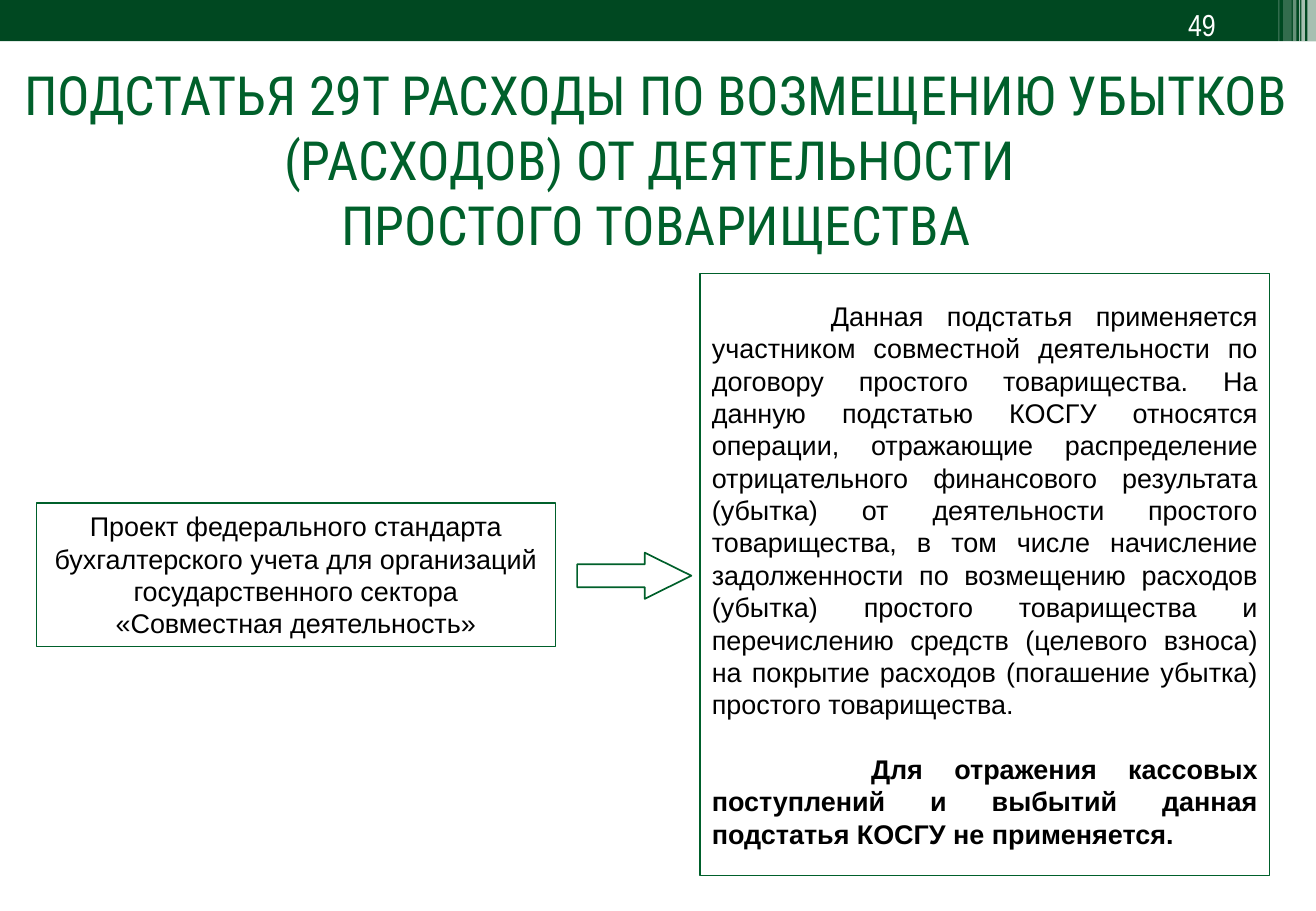
import pptx
import pptx.util
import pptx.dml.color
import pptx.enum.shapes
import pptx.enum.text
from lxml import etree

Inches = pptx.util.Inches
Pt = pptx.util.Pt
RGBColor = pptx.dml.color.RGBColor
Shapes = pptx.enum.shapes.MSO_SHAPE
Align = pptx.enum.text.PP_ALIGN
Anchor = pptx.enum.text.MSO_ANCHOR

BAND_GREEN = RGBColor(0x00, 0x48, 0x21)
GREEN = RGBColor(0x00, 0x60, 0x2B)
WHITE = RGBColor(0xFF, 0xFF, 0xFF)
BLACK = RGBColor(0x00, 0x00, 0x00)

PAGE_NUMBER = "49"
HEADING = [
    "ПОДСТАТЬЯ 29Т РАСХОДЫ ПО ВОЗМЕЩЕНИЮ УБЫТКОВ (РАСХОДОВ) ОТ ДЕЯТЕЛЬНОСТИ ",
    "ПРОСТОГО ТОВАРИЩЕСТВА",
]
STANDARD = (
    "Проект федерального стандарта бухгалтерского учета для организаций "
    "государственного сектора «Совместная деятельность»"
)
APPLICATION = (
    "Данная подстатья применяется участником совместной деятельности по договору "
    "простого товарищества. На данную подстатью КОСГУ относятся операции, отражающие "
    "распределение отрицательного финансового результата (убытка) от деятельности "
    "простого товарищества, в том числе начисление задолженности по возмещению расходов "
    "(убытка) простого товарищества и перечислению средств (целевого взноса) на покрытие "
    "расходов (погашение убытка) простого товарищества."
)
EXCLUSION = (
    "Для отражения кассовых поступлений и выбытий данная подстатья КОСГУ не применяется."
)
STRIPES = [
    (10.76, 0.07, 0.34, 65),
    (10.71, 0.03, 0.34, 65),
    (10.69, 0.01, 0.34, 60),
    (10.64, 0.03, 0.34, 40),
    (10.56, 0.07, 0.36, 20),
    (10.52, 0.01, 0.36, 30),
]
BODY_LINE = Pt(19.2)


def add_figure(kind, place, fill=None, line=None, width=0.75):
    figure = slide.shapes.add_shape(kind, *map(Inches, place))
    figure.shadow.inherit = False
    if fill is None:
        figure.fill.background()
    else:
        figure.fill.solid()
        figure.fill.fore_color.rgb = fill
    if line is None:
        figure.line.fill.background()
    else:
        figure.line.color.rgb = line
        figure.line.width = Pt(width)
    return figure


def write(paragraph, text, font, size, color, align, bold=False):
    paragraph.alignment = align
    run = paragraph.add_run()
    run.text = text
    run.font.name = font
    run.font.size = Pt(size)
    run.font.color.rgb = color
    run.font.bold = bold


def add_note(place, paragraphs, align):
    frame = add_figure(Shapes.RECTANGLE, place, WHITE, GREEN).text_frame
    frame.word_wrap = True
    frame.vertical_anchor = Anchor.MIDDLE
    for index, (text, indent, bold) in enumerate(paragraphs):
        paragraph = frame.add_paragraph() if index else frame.paragraphs[0]
        paragraph.line_spacing = BODY_LINE
        paragraph.space_before = BODY_LINE if index else Pt(0)
        properties = paragraph._p.get_or_add_pPr()
        properties.set("marL", "0")
        properties.set("indent", str(Inches(indent)))
        write(paragraph, text, "Arial", 16, BLACK, align, bold)


presentation = pptx.Presentation()
presentation.slide_width = Inches(10.83)
presentation.slide_height = Inches(7.5)
slide = presentation.slides.add_slide(presentation.slide_layouts[5])

add_figure(Shapes.RECTANGLE, (0, 0, 10.83, 0.34), BAND_GREEN)
for left, width, height, opacity in STRIPES:
    stripe = add_figure(Shapes.RECTANGLE, (left, 0, width, height), WHITE)
    color = stripe.fill._xPr.find(".//" + pptx.oxml.ns.qn("a:srgbClr"))
    etree.SubElement(color, pptx.oxml.ns.qn("a:alpha")).set("val", str(opacity * 1000))

number = slide.shapes.add_textbox(*map(Inches, (9.68, 0, 0.9, 0.4))).text_frame
number.word_wrap = True
write(number.paragraphs[0], PAGE_NUMBER, "Arial Narrow", 18, WHITE, Align.LEFT)

title = slide.shapes.title
title.left, title.top, title.width, title.height = map(Inches, (-0.02, 0.45, 10.84, 1.72))
heading = title.text_frame
heading.word_wrap = True
heading.auto_size = pptx.enum.text.MSO_AUTO_SIZE.NONE
heading.vertical_anchor = Anchor.MIDDLE
for index, text in enumerate(HEADING):
    paragraph = heading.add_paragraph() if index else heading.paragraphs[0]
    paragraph.space_before = Pt(0)
    write(paragraph, text, "Roboto Condensed", 32, GREEN, Align.CENTER)

add_note(
    (5.76, 2.25, 4.69, 4.96),
    [(APPLICATION, 0.98, False), (EXCLUSION, 1.31, True)],
    Align.JUSTIFY,
)
add_note((0.3, 4.14, 4.27, 1.18), [(STANDARD, 0, False)], Align.CENTER)
arrow = add_figure(Shapes.RIGHT_ARROW, (4.75, 4.55, 0.94, 0.38), line=GREEN, width=1)
arrow.adjustments[0] = 0.5
arrow.adjustments[1] = 1.01

presentation.save("out.pptx")
